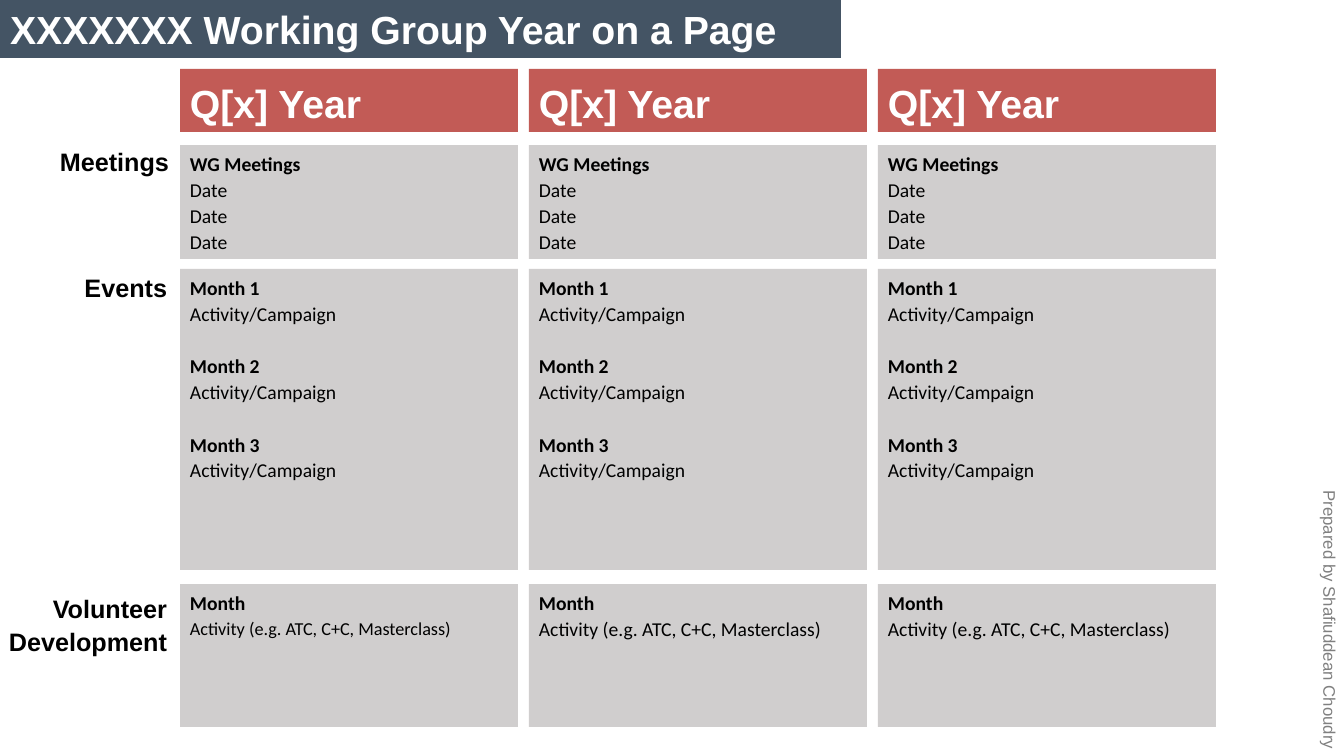
from dataclasses import dataclass, replace

from pptx import Presentation
from pptx.dml.color import RGBColor
from pptx.enum.shapes import MSO_SHAPE
from pptx.enum.text import MSO_ANCHOR, MSO_AUTO_SIZE, PP_ALIGN
from pptx.util import Emu, Pt

EMU_PER_PX = 914400 / 100.8


@dataclass(frozen=True)
class TextStyle:
    size: int
    font: str
    color: str
    bold: bool = False
    align: PP_ALIGN = PP_ALIGN.LEFT
    line_spacing: float = 1.1
    space_before: float = 0


@dataclass(frozen=True)
class Theme:
    title_fill: str = "445464"
    quarter_fill: str = "C25B56"
    panel_fill: str = "D0CECE"
    title: TextStyle = TextStyle(28, "Arial", "FFFFFF", True, line_spacing=1.0)
    quarter: TextStyle = TextStyle(28, "Arial", "FFFFFF", True)
    label: TextStyle = TextStyle(18, "Arial", "000000", True, PP_ALIGN.RIGHT)
    heading: TextStyle = TextStyle(14, "Calibri", "000000", True)
    later_heading: TextStyle = TextStyle(14, "Calibri", "000000", True, space_before=18.8)
    body: TextStyle = TextStyle(14, "Calibri", "000000")
    credit: TextStyle = TextStyle(12, "Arial", "808080", align=PP_ALIGN.RIGHT)


def px(value):
    return Emu(round(value * EMU_PER_PX))


class PageBuilder:
    def __init__(self, deck, theme):
        self.theme = theme
        self.page = deck.slides.add_slide(deck.slide_layouts[5])

    def paint(self, shape, color):
        shape.fill.solid()
        shape.fill.fore_color.rgb = RGBColor.from_string(color)

    def set_lines(self, shape, lines, anchor):
        frame = shape.text_frame
        frame.word_wrap = True
        frame.auto_size = MSO_AUTO_SIZE.NONE
        frame.vertical_anchor = anchor
        for index, (text, style) in enumerate(lines):
            para = frame.add_paragraph() if index else frame.paragraphs[0]
            para.text = text
            para.alignment = style.align
            para.line_spacing = style.line_spacing
            para.space_before = Pt(style.space_before)
            para.font.size = Pt(style.size)
            para.font.name = style.font
            para.font.bold = style.bold
            para.font.color.rgb = RGBColor.from_string(style.color)

    def title(self, text, left, top, width, height):
        box = self.page.shapes.title
        box.left, box.top, box.width, box.height = map(px, (left, top, width, height))
        self.paint(box, self.theme.title_fill)
        self.set_lines(box, [(text, self.theme.title)], MSO_ANCHOR.MIDDLE)

    def panel(self, lines, color, left, top, width, height, anchor=MSO_ANCHOR.TOP):
        box = self.page.shapes.add_shape(
            MSO_SHAPE.RECTANGLE, *map(px, (left, top, width, height)))
        box.shadow.inherit = False
        box.line.fill.background()
        self.paint(box, color)
        self.set_lines(box, lines, anchor)

    def label(self, text, style, left, top, width, height, rotation=0):
        box = self.page.shapes.add_textbox(*map(px, (left, top, width, height)))
        box.rotation = rotation
        self.set_lines(box, [(text, style)], MSO_ANCHOR.TOP)


def main():
    deck = Presentation()
    deck.slide_width, deck.slide_height = px(1344), px(756)
    theme = Theme()
    builder = PageBuilder(deck, theme)
    builder.title("XXXXXXX Working Group Year on a Page", 0, 0, 841, 58)

    builder.label("Meetings", theme.label, 0, 138, 179, 48)
    builder.label("Events", theme.label, -2, 264, 179, 48)
    builder.label("Volunteer Development", theme.label, -2, 585, 179, 77)

    meetings = [("WG Meetings", theme.heading)] + [("Date", theme.body)] * 3
    events = []
    for month in (1, 2, 3):
        heading = theme.heading if month == 1 else theme.later_heading
        events += [(f"Month {month}", heading), ("Activity/Campaign", theme.body)]

    column_left, column_step, column_width = 180, 349, 338
    for column, activity_size in enumerate((13, 14, 14)):
        left = column_left + column * column_step
        development = [
            ("Month", theme.heading),
            ("Activity (e.g. ATC, C+C, Masterclass)", replace(theme.body, size=activity_size)),
        ]
        builder.panel([("Q[x] Year", theme.quarter)], theme.quarter_fill,
                      left, 69, column_width, 63, MSO_ANCHOR.MIDDLE)
        for lines, top, height in ((meetings, 145, 114), (events, 269, 301),
                                   (development, 584, 143)):
            builder.panel(lines, theme.panel_fill, left, top, column_width, height)

    builder.label("Prepared by Shafiuddean Choudry", theme.credit, 1170, 582, 322, 32, 90)
    deck.save("out.pptx")


if __name__ == "__main__":
    main()
